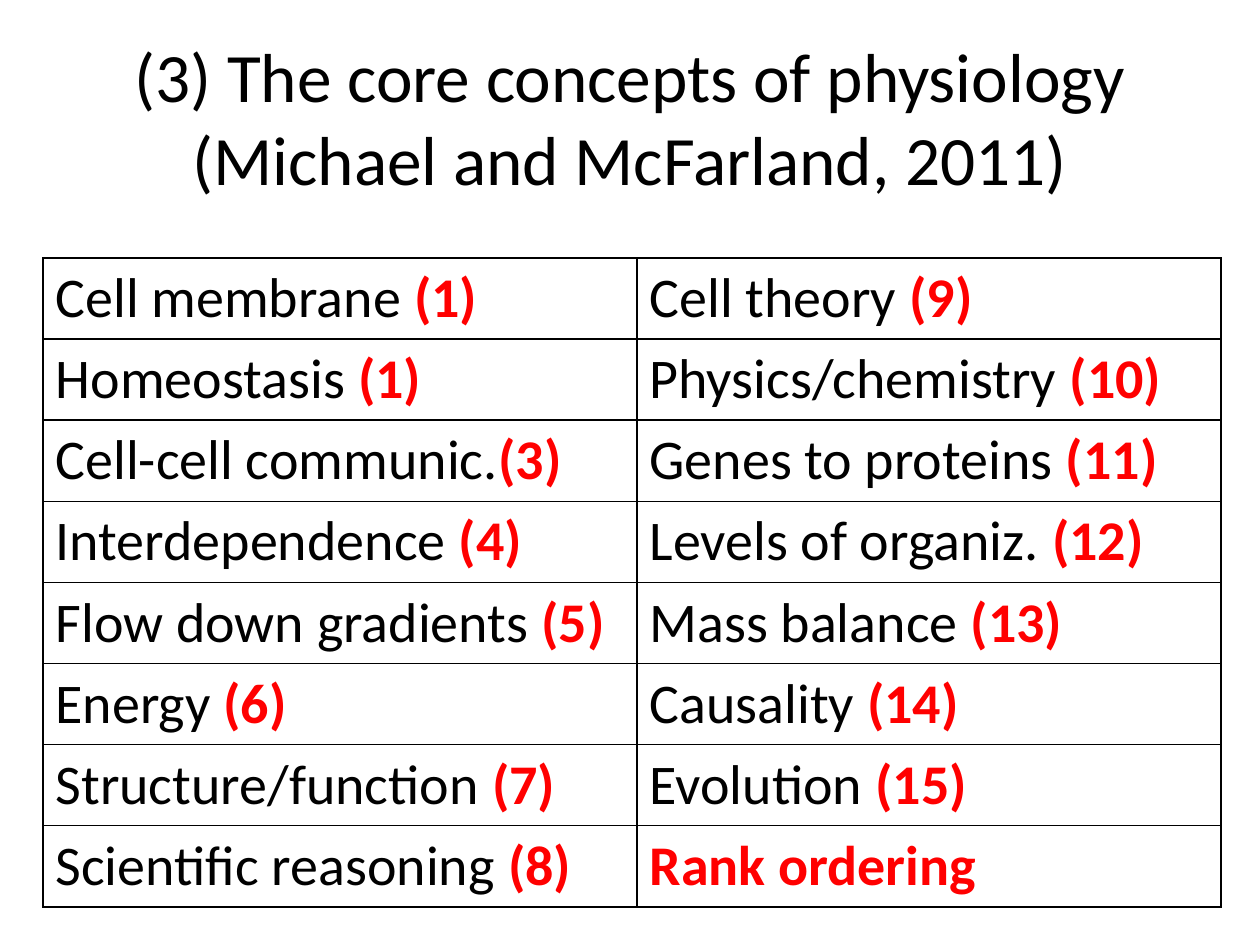
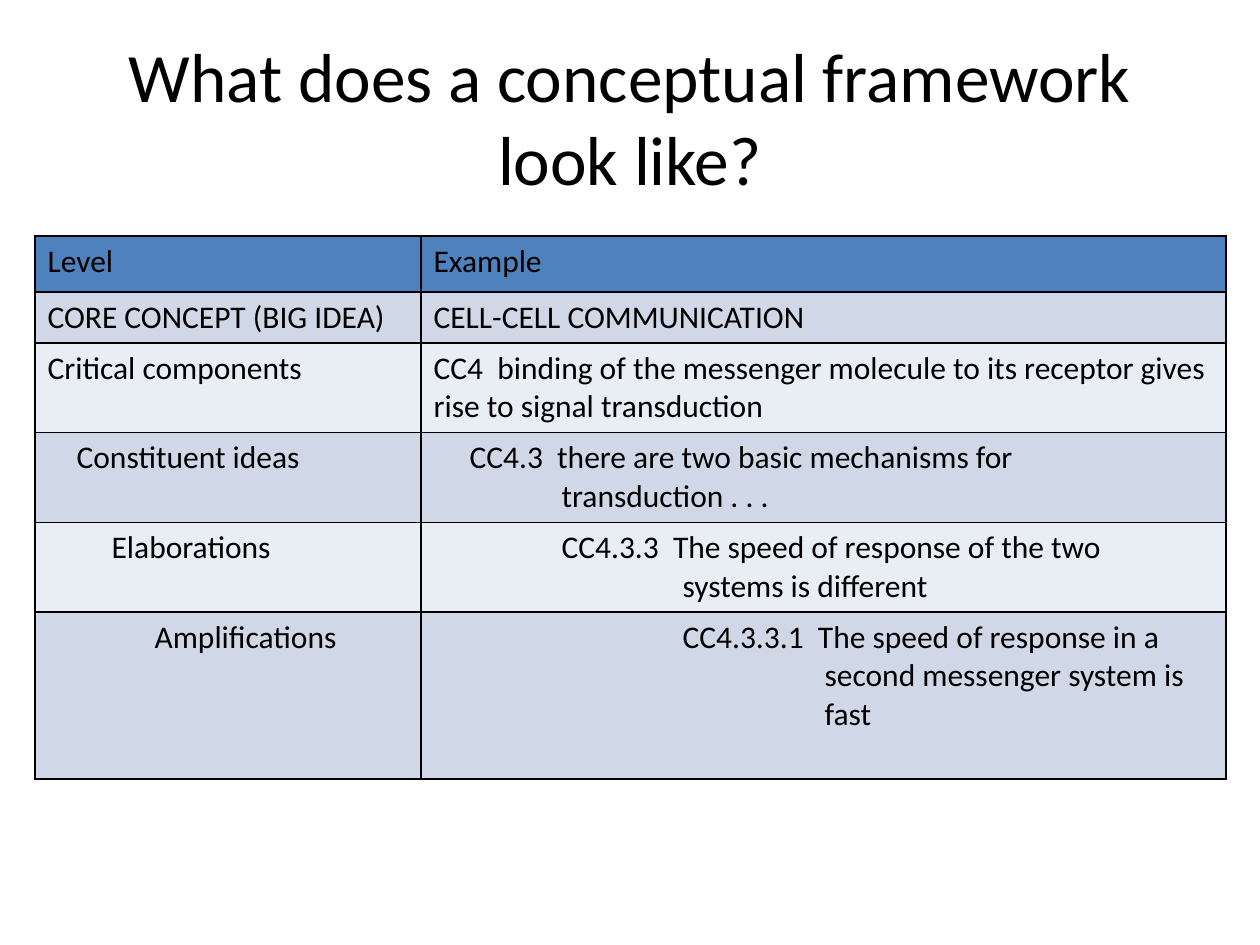
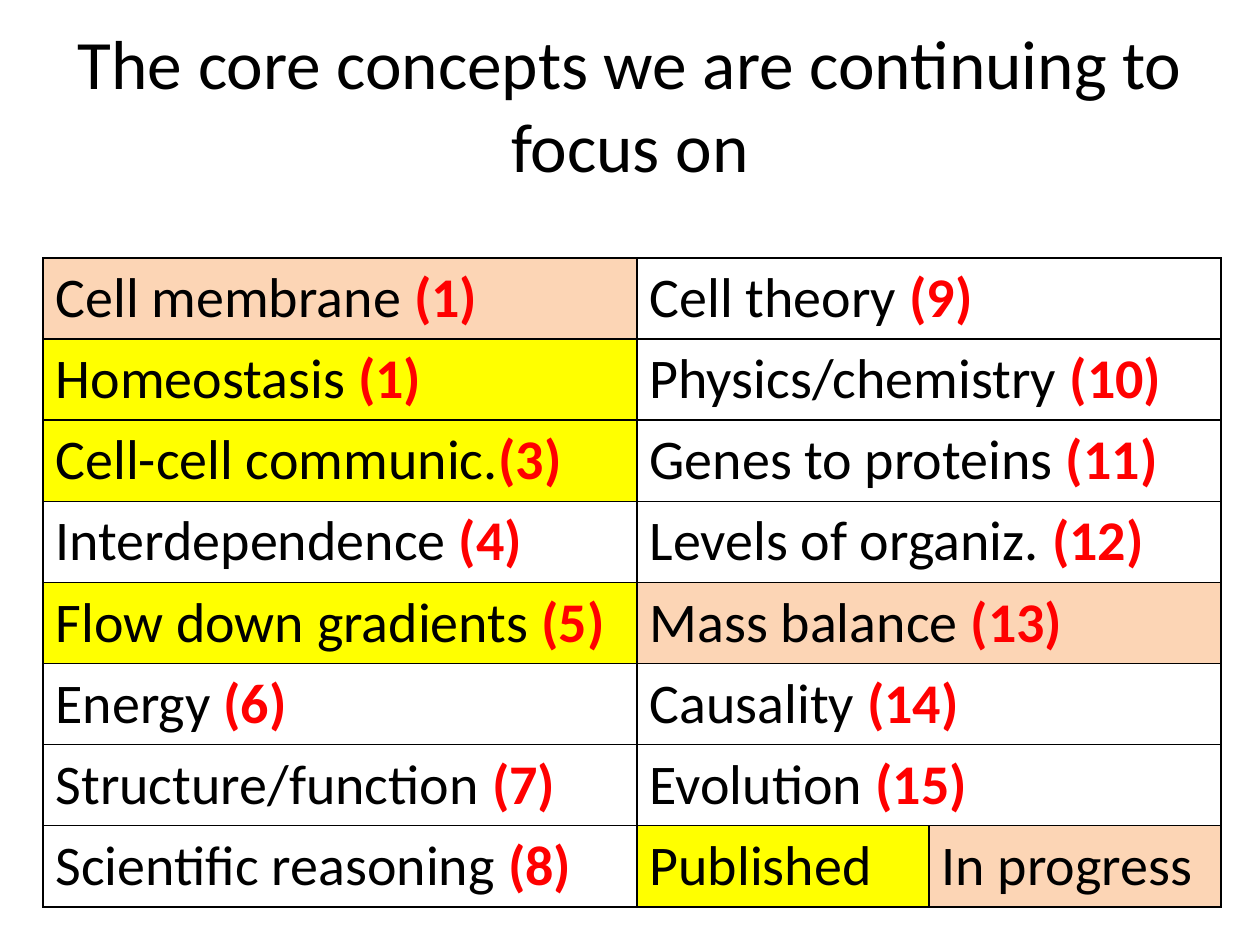
from lxml import etree
from pptx import Presentation
from pptx import util as u
from pptx.dml.color import RGBColor
from pptx.enum import text
from pptx.oxml.ns import qn

BLACK, RED = "000000", "FF0000"
HEADER, BAND_DARK, BAND_LIGHT = "4F81BD", "D0D8E8", "E9EDF4"
PUBLISHED, IN_PROGRESS = "FFFF00", "FCD5B5"
FONT = "Calibri"
TITLE_BOX = (63, 38, 1134, 157)
CONCEPT_BOX = (43, 258, 1178, 648)
FRAMEWORK_BOX = (35, 236, 1191, 542)

CONCEPTS = [
    ("Cell membrane ", 1), ("Homeostasis ", 1), ("Cell-cell communic.", 3),
    ("Interdependence ", 4), ("Flow down gradients ", 5), ("Energy ", 6),
    ("Structure/function ", 7), ("Scientific reasoning ", 8),
    ("Cell theory ", 9), ("Physics/chemistry ", 10), ("Genes to proteins ", 11),
    ("Levels of organiz. ", 12), ("Mass balance ", 13), ("Causality ", 14),
    ("Evolution ", 15),
]
CONCEPT_ROWS = 8
STATUS = {
    "Cell membrane ": IN_PROGRESS, "Mass balance ": IN_PROGRESS,
    "Homeostasis ": PUBLISHED, "Cell-cell communic.": PUBLISHED,
    "Flow down gradients ": PUBLISHED,
}
LEVELS = [
    (56, [(0, "Level")], [(0, "Example")]),
    (51, [(0, "CORE CONCEPT (BIG IDEA)")], [(0, "CELL-CELL COMMUNICATION")]),
    (89, [(0, "Critical components")],
     [(0, "CC4  binding of the messenger molecule to its receptor gives "
          "rise to signal transduction")]),
    (90, [(29, "Constituent ideas")],
     [(36, "CC4.3  there are two basic mechanisms for"),
      (128, "transduction . . .")]),
    (89, [(64, "Elaborations")],
     [(128, "CC4.3.3  The speed of response of the two"),
      (249, "systems is different")]),
    (167, [(107, "Amplifications")],
     [(249, "CC4.3.3.1  The speed of response in a"),
      (391, "second messenger system is"), (391, "fast")]),
]


def px(n):
    """Turn pixels into EMU."""
    return u.Emu(round(n * 914400 / 126))


def rgb(color):
    """Turn a hex string into a colour."""
    return RGBColor.from_string(color)


def add_run(p, words, size, color=BLACK, bold=False):
    """Add one formatted run to a paragraph."""
    r = p.add_run()
    r.text = words
    r.font.name, r.font.size, r.font.bold = FONT, u.Pt(size), bold
    r.font.color.rgb = rgb(color)


def add_slide(prs, lines, drop=0, lift=0):
    """Add a slide with its title, its box dropped and its text lifted."""
    s = prs.slides.add_slide(prs.slide_layouts[5])
    sp = s.shapes.title
    x, y, w, h = TITLE_BOX
    sp.left, sp.top, sp.width, sp.height = map(px, (x, y + drop, w, h))
    tf = sp.text_frame
    tf.word_wrap = True
    tf.auto_size = text.MSO_AUTO_SIZE.NONE
    tf.vertical_anchor = text.MSO_ANCHOR.MIDDLE
    tf.margin_bottom = px(6 + lift)
    p = tf.paragraphs[0]
    p.alignment = text.PP_ALIGN.CENTER
    for i, line in enumerate(lines):
        if i:
            p.add_line_break()
        add_run(p, line, 39.6)
    return s


def style_cell(cell, fill=None):
    """Give a cell its fill and thin black borders."""
    if fill:
        cell.fill.solid()
        cell.fill.fore_color.rgb = rgb(fill)
    else:
        cell.fill.background()
    tcPr = cell._tc.get_or_add_tcPr()
    for i, side in enumerate(("a:lnL", "a:lnR", "a:lnT", "a:lnB")):
        ln = etree.Element(qn(side), w=str(u.Pt(1)))
        solid = etree.SubElement(ln, qn("a:solidFill"))
        etree.SubElement(solid, qn("a:srgbClr"), val=BLACK)
        tcPr.insert(i, ln)


def add_grid(s, box, widths, heights):
    """Add a plain table with the given column widths and row heights."""
    table = s.shapes.add_table(len(heights), len(widths), *map(px, box)).table
    table.first_row = table.horz_banding = False
    for col, w in zip(table.columns, widths):
        col.width = px(w)
    for row, h in zip(table.rows, heights):
        row.height = px(h)
    return table


def concept_table(s, box, last_cells, status):
    """Fill a box with the ranked concepts, closing with the last cells."""
    x, y, w, h = box
    first = 594
    n = len(last_cells)
    widths = [first] + [(w - first) // n] * n
    table = add_grid(s, box, widths, [h // CONCEPT_ROWS] * CONCEPT_ROWS)
    fills = {}
    for i, (name, rank) in enumerate(CONCEPTS):
        col, row = divmod(i, CONCEPT_ROWS)
        cell = table.cell(row, col)
        if col and n > 1:
            cell.merge(table.cell(row, n))
        p = cell.text_frame.paragraphs[0]
        add_run(p, name, 32)
        add_run(p, f"({rank})", 32, RED, True)
        fills[row, col] = status.get(name)
    for col, (words, color, bold, fill) in enumerate(last_cells, 1):
        p = table.cell(CONCEPT_ROWS - 1, col).text_frame.paragraphs[0]
        add_run(p, words, 32, color, bold)
        fills[CONCEPT_ROWS - 1, col] = fill
    for row in range(CONCEPT_ROWS):
        for col in range(n + 1):
            style_cell(table.cell(row, col), fills.get((row, col)))


def framework_table(s, box):
    """Fill a box with the levels and their indented examples."""
    first = 386
    table = add_grid(s, box, [first, box[2] - first], [lv[0] for lv in LEVELS])
    for row, (_, *columns) in enumerate(LEVELS):
        fill = (BAND_DARK if row % 2 else BAND_LIGHT) if row else HEADER
        for col, lines in enumerate(columns):
            cell = table.cell(row, col)
            tf = cell.text_frame
            for i, (indent, words) in enumerate(lines):
                p = tf.add_paragraph() if i else tf.paragraphs[0]
                p._p.get_or_add_pPr().set("marL", str(px(indent)))
                add_run(p, words, 18)
            style_cell(cell, fill)


def main():
    """Build the three slides and save them."""
    prs = Presentation()
    prs.slide_width, prs.slide_height = px(1260), px(945)

    s = add_slide(prs, ["(3) The core concepts of physiology",
                        "(Michael and McFarland, 2011)"])
    concept_table(s, CONCEPT_BOX, [("Rank ordering", RED, True, None)], {})

    s = add_slide(prs, ["What does a conceptual framework look like?"])
    framework_table(s, FRAMEWORK_BOX)

    s = add_slide(prs, ["The core concepts we are continuing to focus on"],
                  drop=28, lift=83)
    concept_table(s, CONCEPT_BOX,
                  [("Published", BLACK, False, PUBLISHED),
                   ("In progress", BLACK, False, IN_PROGRESS)], STATUS)

    prs.save("out.pptx")


if __name__ == "__main__":
    main()
